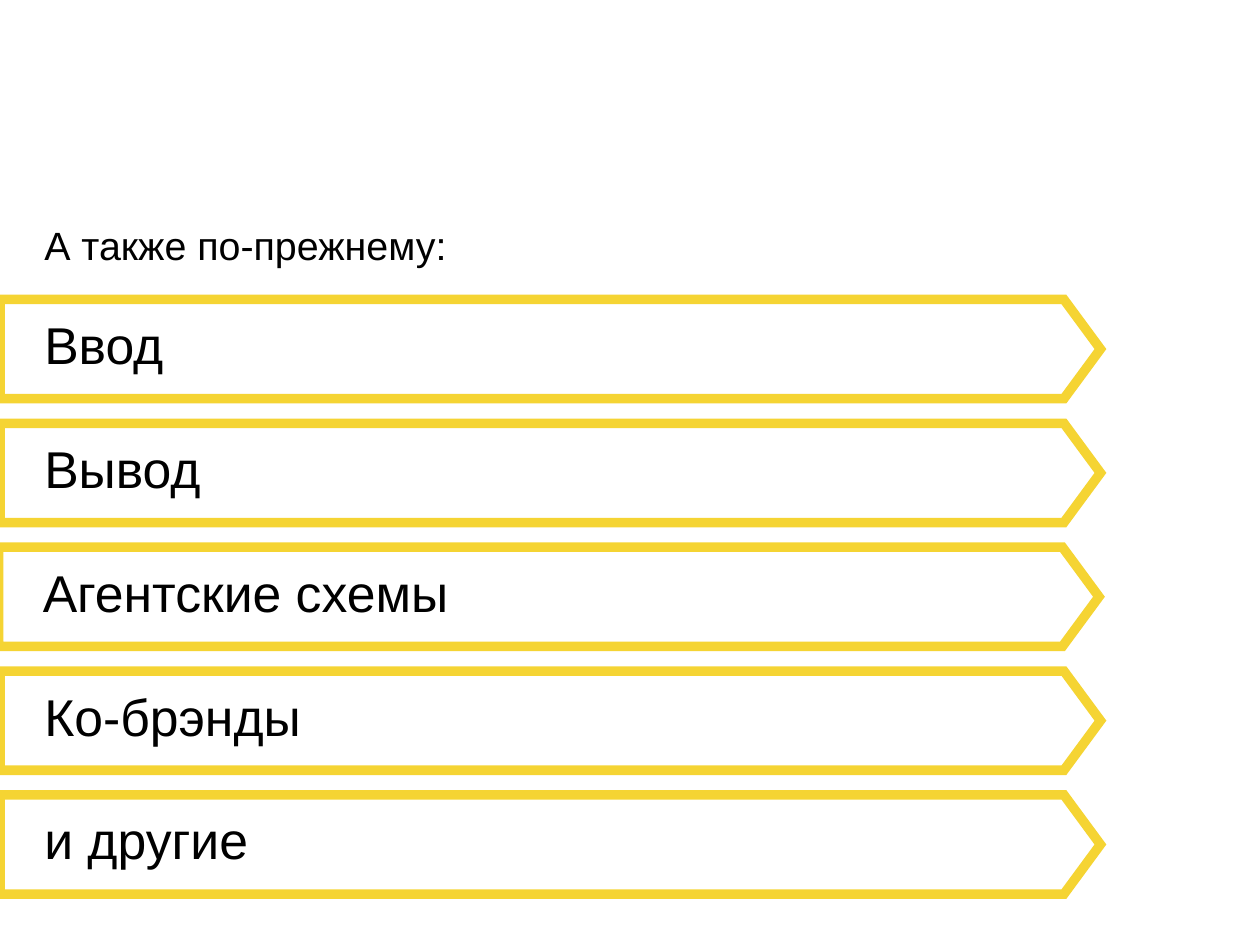
from pptx import Presentation
from pptx.dml.color import RGBColor
from pptx.enum.shapes import MSO_SHAPE
from pptx.enum.text import MSO_ANCHOR, MSO_AUTO_SIZE, PP_ALIGN
from pptx.oxml.ns import qn
from pptx.util import Pt
from lxml.etree import SubElement

BLACK = RGBColor(0x00, 0x00, 0x00)
YELLOW = RGBColor(0xF5, 0xD4, 0x33)
FONT = "Arial"
TEXT_INDENT = 29
TEXT_HEIGHT = 72
ARROW_WIDTH, ARROW_HEIGHT, ARROW_PITCH = 894.2, 80.6, 100.6
ARROWS = [
    ("Ввод", 0),
    ("Вывод", 0),
    ("Агентские схемы", -1.2),
    ("Ко-брэнды", 0),
    ("и другие", 0),
]


def format_text(box, text, size):
    """Write one left-aligned line in the middle of the box."""
    frame = box.text_frame
    frame.text = text
    frame.word_wrap = True
    frame.auto_size = MSO_AUTO_SIZE.NONE
    frame.vertical_anchor = MSO_ANCHOR.MIDDLE
    frame.margin_left = frame.margin_right = Pt(7)
    frame.margin_top = frame.margin_bottom = Pt(4)
    para = frame.paragraphs[0]
    para.alignment = PP_ALIGN.LEFT
    span = para.runs[0]
    span.font.name = FONT
    span.font.size = Pt(size)
    span.font.color.rgb = BLACK


def add_heading(page, left, top, width, height):
    """Place the title above the arrows."""
    title = page.shapes.title
    title.left, title.top = Pt(left), Pt(top)
    title.width, title.height = Pt(width), Pt(height)
    format_text(title, "А также по-прежнему:", 32)


def add_arrow(page, text, left, top, width, height):
    """Draw one outlined arrow with its label."""
    arrow = page.shapes.add_shape(
        MSO_SHAPE.PENTAGON, Pt(left), Pt(top), Pt(width), Pt(height)
    )
    arrow.adjustments[0] = 0.368
    arrow.shadow.inherit = False
    arrow.fill.background()
    arrow.line.color.rgb = YELLOW
    arrow.line.width = Pt(7.75)
    outline = arrow.line._get_or_add_ln()
    SubElement(outline, qn("a:miter")).set("lim", "800000")
    label = page.shapes.add_textbox(
        Pt(left + TEXT_INDENT), Pt(top), Pt(width - 100), Pt(TEXT_HEIGHT)
    )
    format_text(label, text, 42)


def add_arrow_list(page, left, top, width):
    """Stack the arrows at equal steps."""
    for index, (text, shift) in enumerate(ARROWS):
        add_arrow(page, text, left + shift, top + index * ARROW_PITCH,
                  width, ARROW_HEIGHT)


def main():
    """Build the deck and save it."""
    deck = Presentation()
    deck.slide_width, deck.slide_height = Pt(1023.84), Pt(767.52)
    page = deck.slides.add_slide(deck.slide_layouts[5])
    add_heading(page, TEXT_INDENT, 162.7, 794, TEXT_HEIGHT)
    add_arrow_list(page, 0, 243.2, ARROW_WIDTH)
    deck.save("out.pptx")


if __name__ == "__main__":
    main()
